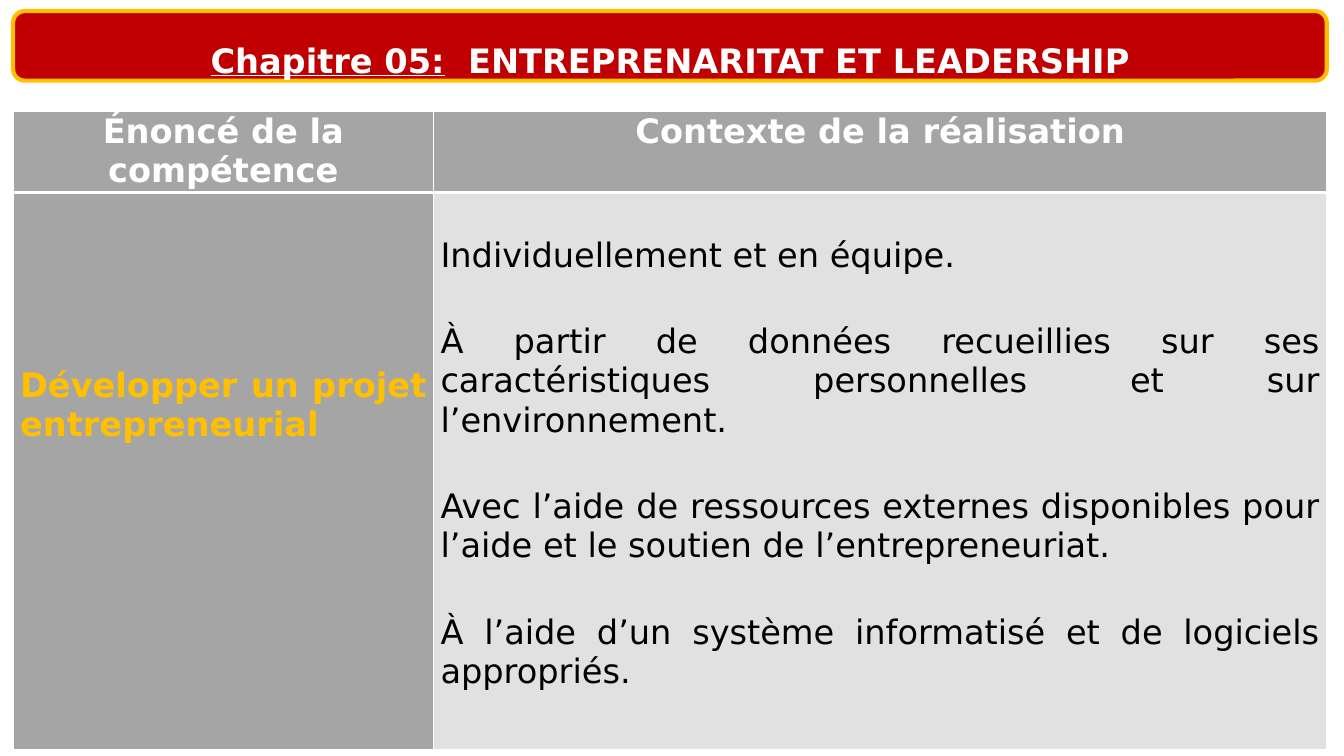
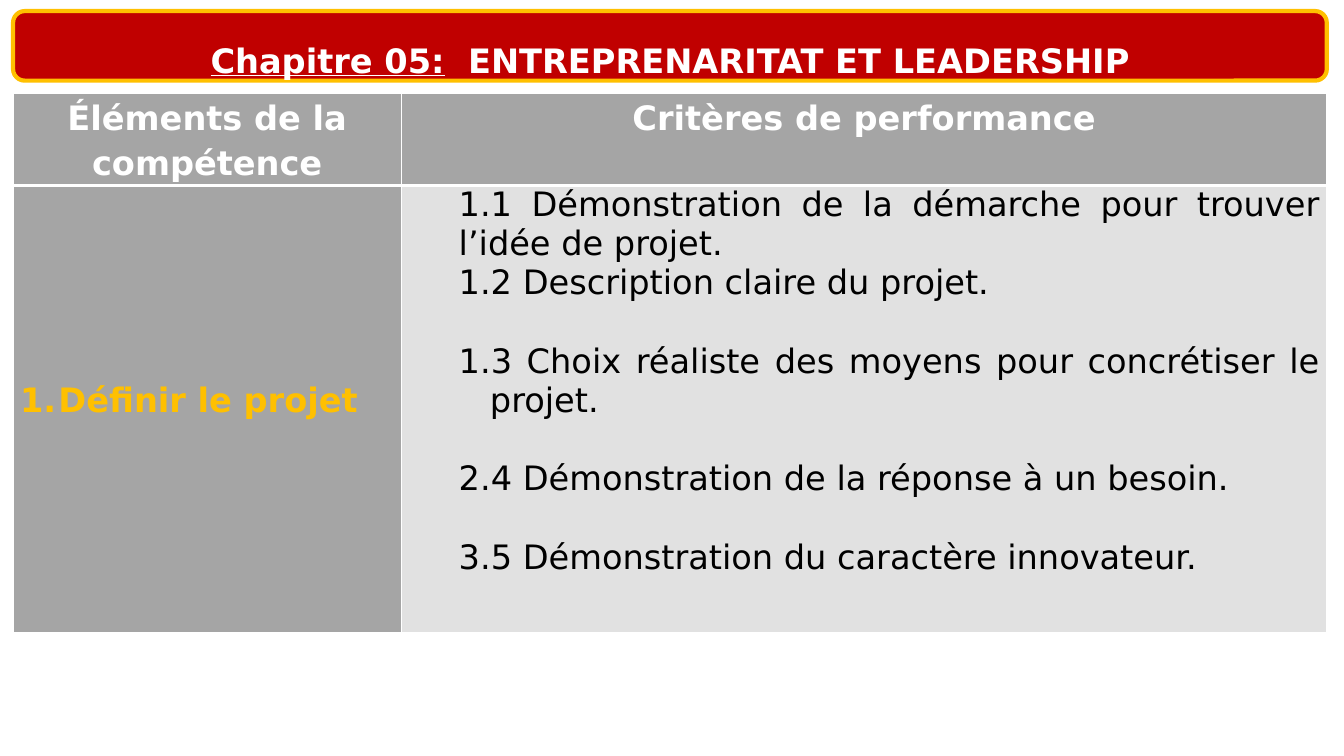
from lxml import etree
from pptx import Presentation
from pptx import util as u
from pptx.dml.color import RGBColor
from pptx.enum import shapes, text
from pptx.oxml import ns

ALIGN = text.PP_ALIGN


def color(value):
    return RGBColor.from_string(value)


def add_text(para, content, size=24, font="DejaVu Sans", fill="000000", bold=False, underline=False):
    span = para.add_run()
    span.text = content
    span.font.size = u.Pt(size)
    span.font.name = font
    span.font.color.rgb = color(fill)
    span.font.bold = bold
    span.font.underline = underline


def format_para(para, align=ALIGN.JUSTIFY, spacing=1.0, before=0, level=0, left=0, hanging=0, numbered=False):
    para.alignment = align
    para.line_spacing = spacing
    para.space_before = u.Pt(before)
    para.level = level
    properties = para._p.get_or_add_pPr()
    properties.set("marL", str(u.Inches(left)))
    properties.set("indent", str(-u.Inches(hanging)))
    if numbered:
        etree.SubElement(properties, ns.qn("a:buAutoNum"), type="arabicPeriod")


def draw_border(cell, side, width, value):
    line = etree.SubElement(cell._tc.get_or_add_tcPr(), ns.qn(f"a:ln{side}"), w=str(u.Pt(width)))
    solid = etree.SubElement(line, ns.qn("a:solidFill"))
    etree.SubElement(solid, ns.qn("a:srgbClr"), val=value)


class ChapterDeck:
    RED, GOLD, WHITE = "C00000", "FFC000", "FFFFFF"
    GREY, PALE = "A5A5A5", "E1E1E1"
    LEFT, WIDTH = 0.13, 13.03
    BANNER_TOP, BANNER_HEIGHT = 0.11, 0.69

    def __init__(self):
        self.deck = Presentation()
        self.deck.slide_width = u.Inches(13.33)
        self.deck.slide_height = u.Inches(7.5)
        self.page = None

    def add_page(self):
        self.page = self.deck.slides.add_slide(self.deck.slide_layouts[5])
        self.add_banner()
        self.add_title()

    def banner_area(self):
        return [u.Inches(n) for n in (self.LEFT, self.BANNER_TOP, self.WIDTH, self.BANNER_HEIGHT)]

    def add_banner(self):
        banner = self.page.shapes.add_shape(
            shapes.MSO_SHAPE.FLOWCHART_ALTERNATE_PROCESS, *self.banner_area())
        banner.shadow.inherit = False
        banner.fill.solid()
        banner.fill.fore_color.rgb = color(self.RED)
        banner.line.color.rgb = color(self.GOLD)
        banner.line.width = u.Pt(3)
        tree = self.page.shapes._spTree
        tree.remove(banner._element)
        tree.insert(2, banner._element)

    def add_title(self):
        title = self.page.shapes.title
        title.left, title.top, title.width, title.height = self.banner_area()
        frame = title.text_frame
        frame.margin_top = frame.margin_bottom = 0
        frame.vertical_anchor = text.MSO_ANCHOR.BOTTOM
        frame.auto_size = text.MSO_AUTO_SIZE.NONE
        frame.word_wrap = True
        para = frame.paragraphs[0]
        format_para(para, align=ALIGN.CENTER)
        add_text(para, "Chapitre 05:", fill=self.WHITE, bold=True, underline=True)
        add_text(para, "  ENTREPRENARITAT ET LEADERSHIP", fill=self.WHITE, bold=True)

    def add_table(self, top, first_column, row_heights):
        frame = self.page.shapes.add_table(
            2, 2, u.Inches(self.LEFT), u.Inches(top), u.Inches(self.WIDTH), u.Inches(sum(row_heights)))
        table = frame.table
        for column, width in zip(table.columns, (first_column, self.WIDTH - first_column)):
            column.width = u.Inches(width)
        for row, height in zip(table.rows, row_heights):
            row.height = u.Inches(height)
        return table

    def fill_cell(self, cell, items, header=False, fill=GREY, ink=WHITE, bold=True, top=0):
        for side in "LRTB":
            draw_border(cell, side, 3 if side == ("B" if header else "T") else 1, self.WHITE)
        cell.fill.solid()
        cell.fill.fore_color.rgb = color(fill)
        cell.margin_left = cell.margin_right = u.Inches(0.07)
        cell.margin_top, cell.margin_bottom = u.Inches(top), 0
        for index, (content, style) in enumerate(items):
            frame = cell.text_frame
            para = frame.add_paragraph() if index else frame.paragraphs[0]
            format_para(para, **style)
            add_text(para, content, fill=ink, bold=bold)

    def add_competence_table(self, top, first_column, row_heights, headings, subject, details,
                             subject_top, details_top=0, heading_spacing=1.0):
        table = self.add_table(top, first_column, row_heights)
        heading_style = dict(align=ALIGN.CENTER, spacing=heading_spacing)
        for column, heading in enumerate(headings):
            self.fill_cell(table.cell(0, column), [(heading, heading_style)], header=True)
        self.fill_cell(table.cell(1, 0), [subject], ink=self.GOLD, top=subject_top)
        self.fill_cell(table.cell(1, 1), details, fill=self.PALE, ink="000000", bold=False, top=details_top)


def main():
    chapter = ChapterDeck()

    chapter.add_page()
    contexts = [
        "Individuellement et en équipe.",
        "À partir de données recueillies sur ses caractéristiques personnelles et sur l’environnement.",
        "Avec l’aide de ressources externes disponibles pour l’aide et le soutien de l’entrepreneuriat.",
        "À l’aide d’un système informatisé et de logiciels appropriés.",
    ]
    chapter.add_competence_table(
        1.11, 4.17, (0.8, 5.53),
        ("Énoncé de la compétence", "Contexte de la réalisation"),
        ("Développer un projet entrepreneurial", {}),
        [(context, dict(before=34 if index else 0)) for index, context in enumerate(contexts)],
        subject_top=1.72, details_top=0.43)

    chapter.add_page()
    plain = dict(level=1, left=0.5)
    numbered = dict(level=1, left=0.81, hanging=0.31, before=28, numbered=True)
    chapter.add_competence_table(
        0.93, 3.85, (0.91, 4.44),
        ("Éléments de la compétence", "Critères de performance"),
        ("Définir le projet", dict(spacing=1.15, left=0.38, hanging=0.38, numbered=True)),
        [
            ("1.1 Démonstration de la démarche pour trouver l’idée de projet.", plain),
            ("1.2 Description claire du projet.", plain),
            ("3 Choix réaliste des moyens pour concrétiser le projet.", numbered),
            ("4 Démonstration de la réponse à un besoin.", numbered),
            ("5 Démonstration du caractère innovateur.", numbered),
        ],
        subject_top=1.88, heading_spacing=1.15)

    chapter.deck.save("out.pptx")


if __name__ == "__main__":
    main()
